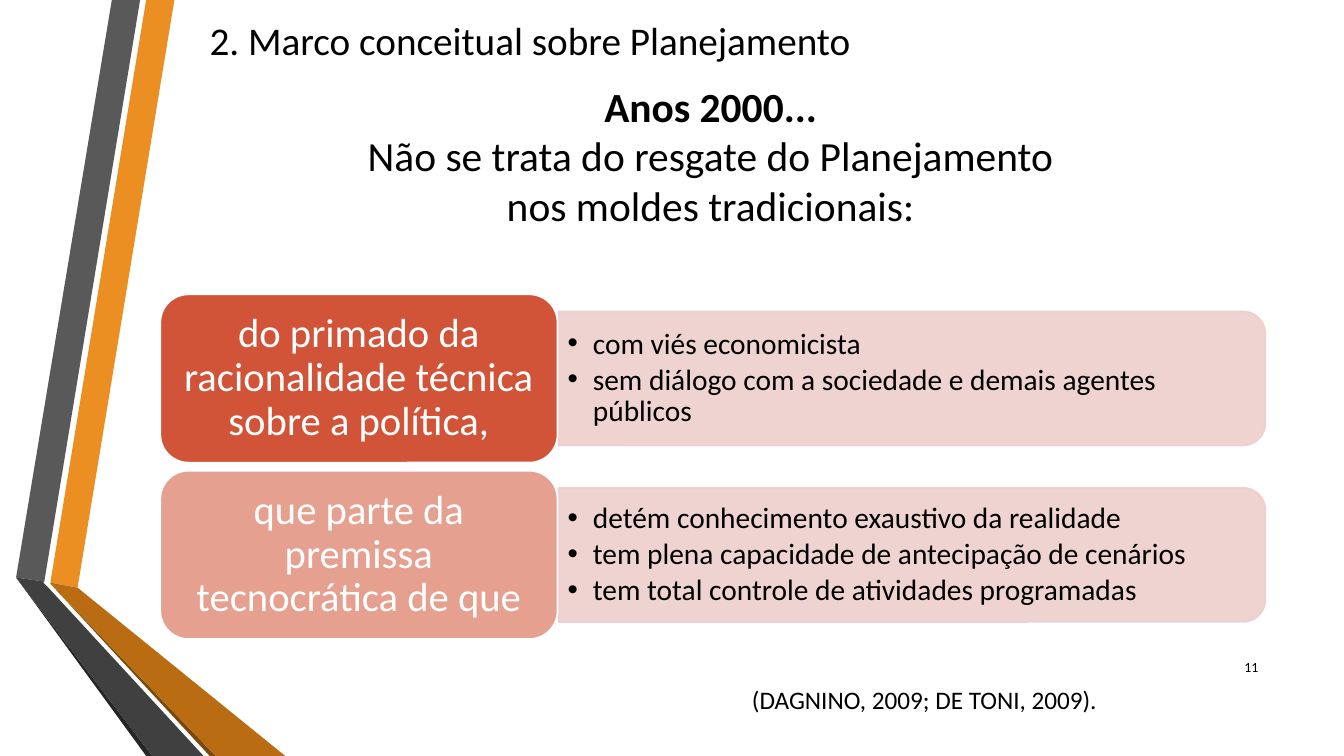
from pptx import Presentation
from pptx import util as u
from pptx.dml.color import RGBColor
from pptx.enum import shapes, text
from pptx.oxml.ns import qn
from lxml import etree

COLORS = {
    "orange": "EB8F22", "gray": "595959", "near_black": "262626", "brown": "7B480B",
    "dark_orange": "B96C11", "dark_gray": "404040", "red": "CD4223", "pale": "EDCFCD",
    "black": "000000", "white": "FFFFFF",
}
FONT = "Calibri"
RIBBONS = [
    ("orange", [(0.5, 5.78), (0.77, 5.83), (1.73, 0), (1.45, 0)]),
    ("gray", [(1.39, 0), (1.11, 0), (0.16, 5.73), (0.44, 5.77)]),
    ("near_black", [(0.16, 5.73), (1.45, 7.5), (1.51, 7.5)]),
    ("brown", [(0.5, 5.79), (2.08, 7.5), (2.14, 7.5)]),
    ("dark_orange", [(0.5, 5.79), (2.14, 7.5), (2.83, 7.5), (0.77, 5.83), (0.5, 5.78)]),
    ("dark_gray", [(2.02, 7.5), (0.48, 5.83), (0.43, 5.78), (0.44, 5.77),
                   (0.16, 5.73), (1.51, 7.5)]),
]
TITLE = "2. Marco conceitual sobre Planejamento"
HEADING = ["Anos 2000...", "Não se trata do resgate do Planejamento nos moldes tradicionais:"]
ROWS = [
    ("do primado da racionalidade técnica sobre a política,", 90,
     ["com viés economicista", "sem diálogo com a sociedade e demais agentes públicos"]),
    ("que parte da premissa tecnocrática de que", 50,
     ["detém conhecimento exaustivo da realidade",
      "tem plena capacidade de antecipação de cenários",
      "tem total controle de atividades programadas"]),
]
CITATION = "(DAGNINO, 2009; DE TONI, 2009)."
PAGE_NUMBER = "11"

CARD_LEFT, CARD_TOP, CARD_WIDTH, CARD_HEIGHT = 1.59, 2.92, 3.94, 1.67
ROW_STEP = 1.75
PANEL_LEFT, PANEL_WIDTH, PANEL_HEIGHT = 5.54, 7.01, 1.33
LIST_WIDTH, LIST_HEIGHT = 6.95, 1.2


def color(name):
    """Return the named colour."""
    return RGBColor.from_string(COLORS[name])


def set_alpha(fill_parent, percent):
    """Make the solid colours under an element partly transparent."""
    for node in fill_parent.findall(qn("a:solidFill") + "/" + qn("a:srgbClr")):
        etree.SubElement(node, qn("a:alpha"), val=str(percent * 1000))


def paint(shape, fill, line=None, fill_alpha=100, line_alpha=100):
    """Give a shape its fill and outline."""
    shape.shadow.inherit = False
    shape.fill.solid()
    shape.fill.fore_color.rgb = color(fill)
    if fill_alpha < 100:
        set_alpha(shape._element.spPr, fill_alpha)
    if line is None:
        shape.line.fill.background()
        return
    shape.line.color.rgb = color(line)
    shape.line.width = u.Pt(1.25)
    if line_alpha < 100:
        set_alpha(shape._element.spPr.find(qn("a:ln")), line_alpha)


def write(shape, lines, size, ink="black", align="LEFT", anchor="MIDDLE",
          margins=(0.1, 0.05), wrap=True, spacing=None, bold_first=False):
    """Fill a text frame and return its paragraphs."""
    frame = shape.text_frame
    frame.word_wrap = wrap
    frame.vertical_anchor = getattr(text.MSO_ANCHOR, anchor)
    frame.margin_left = frame.margin_right = u.Inches(margins[0])
    frame.margin_top = frame.margin_bottom = u.Inches(margins[1])
    for index, line in enumerate(lines):
        paragraph = frame.add_paragraph() if index else frame.paragraphs[0]
        paragraph.alignment = getattr(text.PP_ALIGN, align)
        if spacing:
            paragraph.line_spacing = spacing
        run = paragraph.add_run()
        run.text = line
        run.font.name, run.font.size = FONT, u.Pt(size)
        run.font.color.rgb = color(ink)
        run.font.bold = bold_first and index == 0
    return frame.paragraphs


def add_text(slide, box, lines, size, **options):
    """Add a text box and return its paragraphs."""
    shape = slide.shapes.add_textbox(*map(u.Inches, box))
    return write(shape, lines, size, **options)


def add_ribbon(slide, fill, points):
    """Draw one closed ribbon piece."""
    corners = [(u.Inches(x), u.Inches(y)) for x, y in points]
    builder = slide.shapes.build_freeform(*corners[0])
    builder.add_line_segments(corners[1:], close=True)
    paint(builder.convert_to_shape(), fill)


def add_row(slide, index, label, alpha, items):
    """Draw one card with its panel of bullets."""
    top = CARD_TOP + index * ROW_STEP
    middle = top + CARD_HEIGHT / 2
    panel = slide.shapes.add_shape(
        shapes.MSO_SHAPE.ROUND_2_SAME_RECTANGLE,
        u.Inches(PANEL_LEFT + (PANEL_WIDTH - PANEL_HEIGHT) / 2),
        u.Inches(middle - PANEL_WIDTH / 2),
        u.Inches(PANEL_HEIGHT), u.Inches(PANEL_WIDTH))
    panel.rotation = 90
    paint(panel, "pale", "pale", 90, 90)

    box = (PANEL_LEFT, middle - LIST_HEIGHT / 2, LIST_WIDTH, LIST_HEIGHT)
    for paragraph in add_text(slide, box, items, 21, margins=(0.09, 0.04), spacing=0.9):
        paragraph.space_after = u.Pt(3)
        properties = paragraph._p.get_or_add_pPr()
        properties.set("marL", str(u.Inches(0.25)))
        properties.set("indent", str(u.Inches(-0.25)))
        etree.SubElement(properties, qn("a:buFont"), typeface="Arial")
        etree.SubElement(properties, qn("a:buChar"), char="•")

    card = slide.shapes.add_shape(
        shapes.MSO_SHAPE.ROUNDED_RECTANGLE,
        *map(u.Inches, (CARD_LEFT, top, CARD_WIDTH, CARD_HEIGHT)))
    paint(card, "red", "white", alpha)
    write(card, [label], 29, ink="white", align="CENTER", margins=(0.12, 0.06), spacing=0.9)


def main():
    """Build the slide."""
    presentation = Presentation()
    presentation.slide_width, presentation.slide_height = u.Inches(13.33), u.Inches(7.5)
    slide = presentation.slides.add_slide(presentation.slide_layouts[6])
    for fill, points in RIBBONS:
        add_ribbon(slide, fill, points)
    add_text(slide, (1.98, -0.07, 6.92, 0.94), [TITLE], 28)
    add_text(slide, (3.39, 0.76, 7.32, 1.56), HEADING, 29.6, align="CENTER", bold_first=True)
    for index, row in enumerate(ROWS):
        add_row(slide, index, *row)
    add_text(slide, (7.36, 6.74, 3.84, 0.4), [CITATION], 18, anchor="TOP", wrap=False)
    add_text(slide, (11.98, 6.42, 0.6, 0.4), [PAGE_NUMBER], 10, align="RIGHT")
    presentation.save("out.pptx")


if __name__ == "__main__":
    main()
